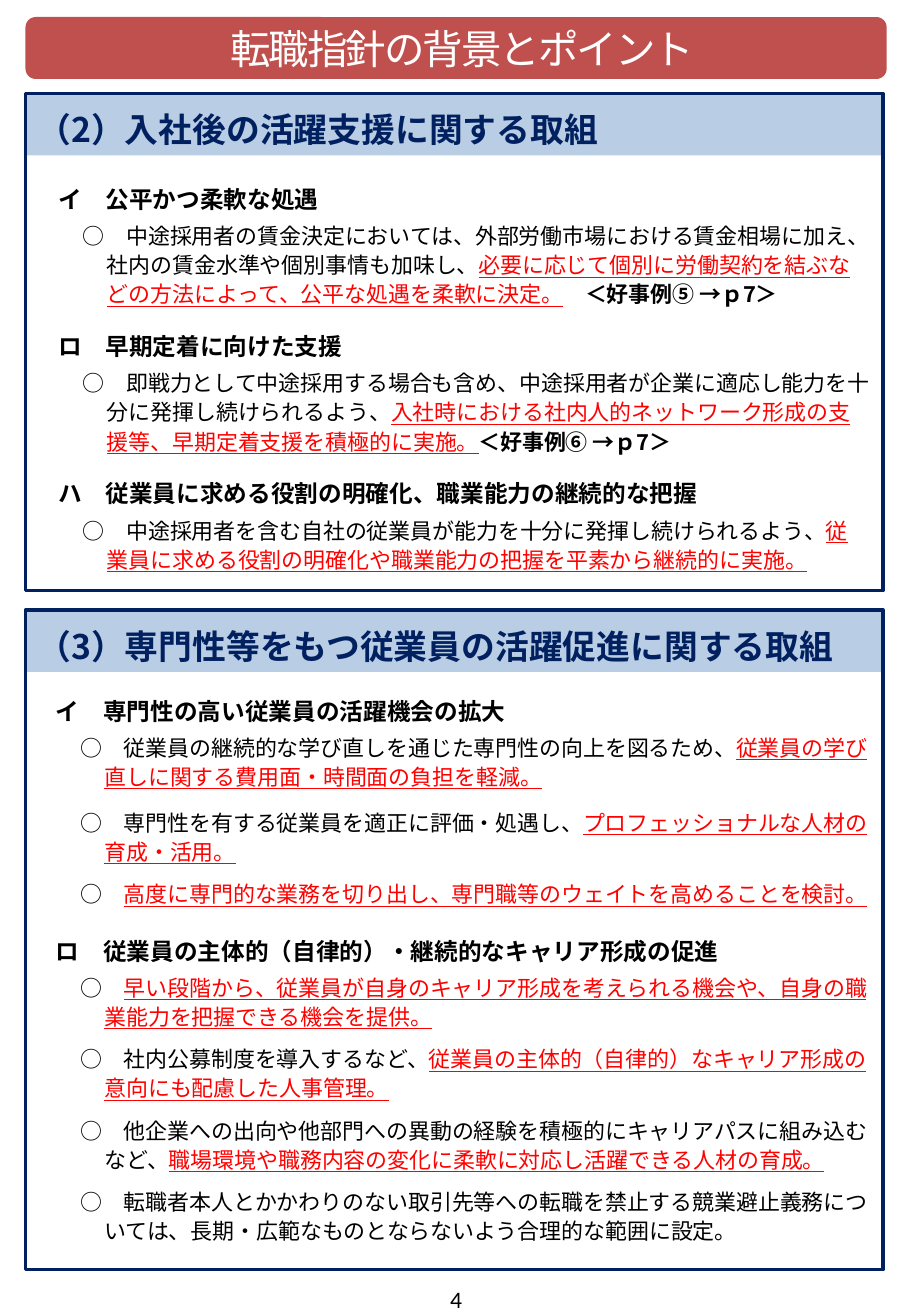
from lxml.etree import SubElement
from pptx import Presentation
from pptx.dml.color import RGBColor
from pptx.enum.lang import MSO_LANGUAGE_ID as Language
from pptx.enum.shapes import MSO_SHAPE as Shape
from pptx.enum.text import MSO_ANCHOR as Anchor, MSO_AUTO_SIZE as AutoSize, PP_ALIGN as Align
from pptx.oxml.ns import qn
from pptx.util import Inches, Pt

COLORS = {"band": "B9CDE5", "navy": "002060", "banner": "C0504D",
          "black": "000000", "red": "FF0000", "white": "FFFFFF"}
JAPANESE_FONT = "Noto Sans CJK JP"
FRAME_LEFT, FRAME_WIDTH, BAND_HEIGHT = 0.21, 7.06, 0.51

# Run styles: color, bold, underline
STYLES = {"plain": ("black", False, False), "key": ("red", False, True),
          "strong": ("black", True, False), "space": ("red", False, False)}
# Paragraph kinds: size, line height, space after, left margin, first-line indent
KINDS = {"heading": (14, 18.5, 4, 0, 0), "item": (13, 17.2, 0, 0.4, -0.2)}

# Each paragraph: kind, space before in points, runs
SUPPORT = [
    ("heading", 0, [("strong", "イ　公平かつ柔軟な処遇")]),
    ("item", 0, [
        ("plain", "○　中途採用者の賃金決定においては、外部労働市場における賃金相場に加え、社内の賃金水準や個別事情も加味し、"),
        ("key", "必要に応じて個別に労働契約を結ぶなどの方法によって、公平な処遇を柔軟に決定。"),
        ("space", "　"), ("strong", "＜好事例⑤ →ｐ7＞")]),
    ("heading", 13, [("strong", "ロ　早期定着に向けた支援")]),
    ("item", 0, [
        ("plain", "○　即戦力として中途採用する場合も含め、中途採用者が企業に適応し能力を十分に発揮し続けられるよう、"),
        ("key", "入社時における社内人的ネットワーク形成の支援等、早期定着支援を積極的に実施。"),
        ("strong", "＜好事例⑥ →ｐ7＞")]),
    ("heading", 13, [("strong", "ハ　従業員に求める役割の明確化、職業能力の継続的な把握")]),
    ("item", 0, [
        ("plain", "○　中途採用者を含む自社の従業員が能力を十分に発揮し続けられるよう、"),
        ("key", "従業員に求める役割の明確化や職業能力の把握を平素から継続的に実施。")]),
]
EXPERTISE = [
    ("heading", 0, [("strong", "イ　専門性の高い従業員の活躍機会の拡大")]),
    ("item", 0, [
        ("plain", "○　従業員の継続的な学び直しを通じた専門性の向上を図るため、"),
        ("key", "従業員の学び直しに関する費用面・時間面の負担を軽減。")]),
    ("item", 10, [
        ("plain", "○　専門性を有する従業員を適正に評価・処遇し、"),
        ("key", "プロフェッショナルな人材の育成・活用。")]),
    ("item", 8, [
        ("plain", "○　"),
        ("key", "高度に専門的な業務を切り出し、専門職等のウェイトを高めることを検討。")]),
    ("heading", 15.5, [("strong", "ロ　従業員の主体的（自律的）・継続的なキャリア形成の促進")]),
    ("item", 0, [
        ("plain", "○　"),
        ("key", "早い段階から、従業員が自身のキャリア形成を考えられる機会や、自身の職業能力を把握できる機会を提供。")]),
    ("item", 8, [
        ("plain", "○　社内公募制度を導入するなど、"),
        ("key", "従業員の主体的（自律的）なキャリア形成の意向にも配慮した人事管理。")]),
    ("item", 8, [
        ("plain", "○　他企業への出向や他部門への異動の経験を積極的にキャリアパスに組み込むなど、"),
        ("key", "職場環境や職務内容の変化に柔軟に対応し活躍できる人材の育成。")]),
    ("item", 8, [
        ("plain", "○　転職者本人とかかわりのない取引先等への転職を禁止する競業避止義務については、長期・広範なものとならないよう合理的な範囲に設定。")]),
]


def color(name):
    return RGBColor.from_string(COLORS[name])


def place(shape, left, top, width, height):
    shape.left, shape.top = Inches(left), Inches(top)
    shape.width, shape.height = Inches(width), Inches(height)


def add_run(paragraph, text, size, color_name, bold=False, underline=False, font=JAPANESE_FONT):
    run = paragraph.add_run()
    run.text = text
    run.font.size, run.font.bold, run.font.underline = Pt(size), bold, underline
    run.font.color.rgb = color(color_name)
    run.font.name = font
    run.font.language_id = Language.JAPANESE
    SubElement(run.font._element, qn("a:ea"), typeface=font)
    return run


def set_frame(frame, anchor, left=0.1, top=0.05, right=0.1, bottom=0.05):
    frame.word_wrap = True
    frame.auto_size = AutoSize.NONE
    frame.vertical_anchor = anchor
    frame.margin_left, frame.margin_top = Inches(left), Inches(top)
    frame.margin_right, frame.margin_bottom = Inches(right), Inches(bottom)


def add_box(slide, kind, area, fill=None, line=None):
    box = slide.shapes.add_shape(kind, *map(Inches, area))
    box.shadow.inherit = False
    if fill:
        box.fill.solid()
        box.fill.fore_color.rgb = color(fill)
    else:
        box.fill.background()
    if line:
        box.line.color.rgb = color(line)
        box.line.width = Pt(2)
    else:
        box.line.fill.background()
    return box


def add_banner(slide, text):
    area = (FRAME_LEFT, 0.14, 7.09, 0.51)
    banner = add_box(slide, Shape.ROUNDED_RECTANGLE, area, fill="banner")
    title = slide.shapes.title
    title._element.addprevious(banner._element)  # banner lies behind the title
    place(title, *area)
    set_frame(title.text_frame, Anchor.MIDDLE, left=0.2, top=0, bottom=0)
    paragraph = title.text_frame.paragraphs[0]
    paragraph.alignment = Align.CENTER
    run = add_run(paragraph, text, 24, "white")
    run.font._element.set("spc", "-120")


def add_section(slide, heading, top, height):
    band = add_box(slide, Shape.RECTANGLE, (FRAME_LEFT, top, FRAME_WIDTH, BAND_HEIGHT), fill="band")
    set_frame(band.text_frame, Anchor.MIDDLE, top=0.08, bottom=0)
    paragraph = band.text_frame.paragraphs[0]
    paragraph.alignment = Align.LEFT
    add_run(paragraph, heading, 20, "navy", bold=True)
    add_box(slide, Shape.RECTANGLE, (FRAME_LEFT, top, FRAME_WIDTH, height), line="navy")


def fill_list(placeholder, area, content):
    place(placeholder, *area)
    frame = placeholder.text_frame
    set_frame(frame, Anchor.TOP)
    for index, (kind, gap, runs) in enumerate(content):
        paragraph = frame.add_paragraph() if index else frame.paragraphs[0]
        size, line_height, after, margin, indent = KINDS[kind]
        paragraph.alignment = Align.LEFT
        paragraph.line_spacing = Pt(line_height)
        paragraph.space_before, paragraph.space_after = Pt(gap), Pt(after)
        properties = paragraph._p.get_or_add_pPr()
        properties.set("marL", str(Inches(margin)))
        properties.set("indent", str(Inches(indent)))
        SubElement(properties, qn("a:buNone"))
        for style, text in runs:
            add_run(paragraph, text, size, *STYLES[style])


def add_page_number(slide, number):
    box = slide.shapes.add_textbox(Inches(2.88), Inches(10.54), Inches(1.75), Inches(0.3))
    set_frame(box.text_frame, Anchor.MIDDLE)
    paragraph = box.text_frame.paragraphs[0]
    paragraph.alignment = Align.CENTER
    add_run(paragraph, number, 14, "black", font="Calibri")


def main():
    presentation = Presentation()
    presentation.slide_width, presentation.slide_height = Inches(7.5), Inches(10.83)
    slide = presentation.slides.add_slide(presentation.slide_layouts.get_by_name("Two Content"))

    # Title
    add_banner(slide, "転職指針の背景とポイント")

    # Support after joining
    add_section(slide, "（2）入社後の活躍支援に関する取組", 0.77, 4.09)
    fill_list(slide.placeholders[1], (0.38, 1.45, 6.88, 3.4), SUPPORT)

    # Employees with expertise
    add_section(slide, "（3）専門性等をもつ従業員の活躍促進に関する取組", 5.02, 5.43)
    fill_list(slide.placeholders[2], (0.36, 5.66, 6.9, 4.64), EXPERTISE)

    # Page number
    add_page_number(slide, "4")
    presentation.save("out.pptx")


if __name__ == "__main__":
    main()
